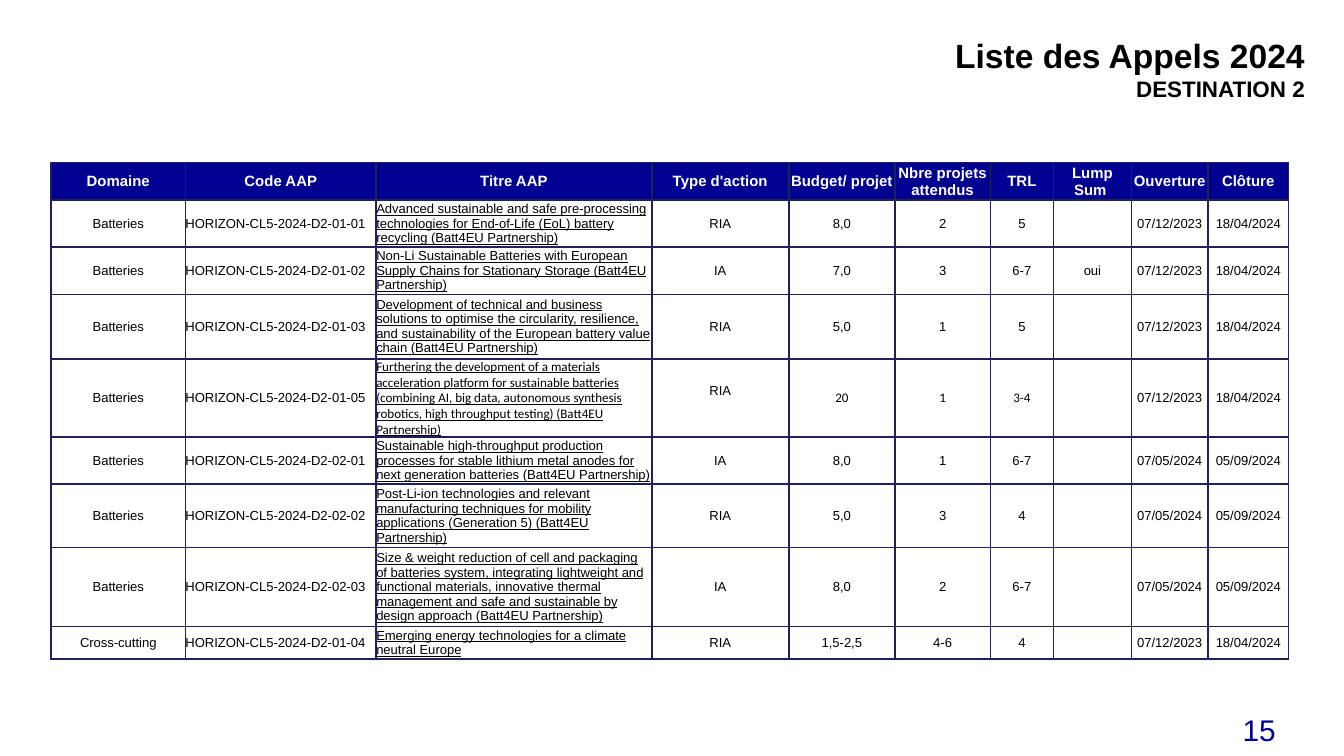
from lxml import etree
from pptx import Presentation
from pptx.dml.color import RGBColor
from pptx.enum import text
from pptx.oxml import ns
from pptx.util import Inches, Pt

NAVY = RGBColor(0x00, 0x00, 0x91)
BLACK = RGBColor(0x00, 0x00, 0x00)
WHITE = RGBColor(0xFF, 0xFF, 0xFF)
BORDER = RGBColor(0x21, 0x21, 0x5A)

LEFT, CENTER, RIGHT = text.PP_ALIGN.LEFT, text.PP_ALIGN.CENTER, text.PP_ALIGN.RIGHT


def write(p, content, size=7, color=BLACK, bold=False, underline=False,
          font="Arial", align=CENTER):
    p.alignment = align
    if not content:
        # An empty cell still needs a small font to keep its row low
        etree.SubElement(p._p, ns.qn("a:endParaRPr"), sz=str(size * 100))
        return
    r = p.add_run()
    r.text = content
    r.font.name = font
    r.font.size = Pt(size)
    r.font.bold = bold
    r.font.underline = underline
    r.font.color.rgb = color


def add_borders(cell):
    tc_pr = cell._tc.get_or_add_tcPr()
    for i, side in enumerate(("lnL", "lnR", "lnT", "lnB")):
        ln = etree.Element(ns.qn(f"a:{side}"), w=str(Pt(1)))
        fill = etree.SubElement(ln, ns.qn("a:solidFill"))
        etree.SubElement(fill, ns.qn("a:srgbClr"), val=str(BORDER))
        tc_pr.insert(i, ln)


# Slide in 16:9
prs = Presentation()
prs.slide_width = Inches(10)
prs.slide_height = Inches(10 * 9 / 16)
s = prs.slides.add_slide(prs.slide_layouts[5])

# Title
sp = s.shapes.title
sp.left, sp.top, sp.width, sp.height = Inches(3.5), Inches(0.21), Inches(6.31), Inches(0.61)
tf = sp.text_frame
tf.auto_size = text.MSO_AUTO_SIZE.SHAPE_TO_FIT_TEXT
tf.vertical_anchor = text.MSO_ANCHOR.TOP
write(tf.paragraphs[0], "Liste des Appels 2024", size=18, bold=True, align=RIGHT)
write(tf.add_paragraph(), "DESTINATION 2", size=12, bold=True, align=RIGHT)

# Table of calls
HEADERS = ("Domaine", "Code AAP", "Titre AAP", "Type d'action", "Budget/ projet",
           "Nbre projets attendus", "TRL", "Lump Sum ", "Ouverture", "Clôture")
CODE, TITLE, ACTION, BUDGET, TRL, LUMP_SUM = 1, 2, 3, 4, 6, 7
BAT = "Batteries"
PREFIX = "HORIZON-CL5-2024-D2-"
FIRST = ("07/12/2023", "18/04/2024")
SECOND = ("07/05/2024", "05/09/2024")
CALLS = (
    (BAT, PREFIX + "01-01",
     "Advanced sustainable and safe pre-processing technologies for End-of-Life (EoL) "
     "battery recycling (Batt4EU Partnership)",
     "RIA", "8,0", "2", "5", "", *FIRST),
    (BAT, PREFIX + "01-02",
     "Non-Li Sustainable Batteries with European Supply Chains for Stationary Storage "
     "(Batt4EU Partnership)",
     "IA", "7,0", "3", "6-7", "oui", *FIRST),
    (BAT, PREFIX + "01-03",
     "Development of technical and business solutions to optimise the circularity, "
     "resilience, and sustainability of the European battery value chain "
     "(Batt4EU Partnership)",
     "RIA", "5,0", "1", "5", "", *FIRST),
    (BAT, PREFIX + "01-05",
     "Furthering the development of a materials acceleration platform for sustainable "
     "batteries (combining AI, big data, autonomous synthesis robotics, high throughput "
     "testing) (Batt4EU Partnership)",
     "RIA", "20", "1", "3-4", "", *FIRST),
    (BAT, PREFIX + "02-01",
     "Sustainable high-throughput production processes for stable lithium metal anodes "
     "for next generation batteries (Batt4EU Partnership)",
     "IA", "8,0", "1", "6-7", "", *SECOND),
    (BAT, PREFIX + "02-02",
     "Post-Li-ion technologies and relevant manufacturing techniques for mobility "
     "applications (Generation 5) (Batt4EU Partnership)",
     "RIA", "5,0", "3", "4", "", *SECOND),
    (BAT, PREFIX + "02-03",
     "Size & weight reduction of cell and packaging of batteries system, integrating "
     "lightweight and functional materials, innovative thermal management and safe and "
     "sustainable by design approach (Batt4EU Partnership)",
     "IA", "8,0", "2", "6-7", "", *SECOND),
    ("Cross-cutting", PREFIX + "01-04",
     "Emerging energy technologies for a climate neutral Europe",
     "RIA", "1,5-2,5", "4-6", "4", "", *FIRST),
)
COL_WIDTHS = (1, 1.42, 2.05, 1.02, 0.79, 0.71, 0.47, 0.58, 0.57, 0.6)
ROW_HEIGHTS = (0.28, 0.35, 0.35, 0.48, 0.58, 0.35, 0.47, 0.59, 0.24)
CALIBRI_ROW = 4
CALIBRI_COLS = (TITLE, *range(BUDGET, TRL + 1))

table = s.shapes.add_table(len(ROW_HEIGHTS), len(COL_WIDTHS), Inches(0.38), Inches(1.21),
                           Inches(sum(COL_WIDTHS)), Inches(sum(ROW_HEIGHTS))).table
for column, width in zip(table.columns, COL_WIDTHS):
    column.width = Inches(width)
for row, height in zip(table.rows, ROW_HEIGHTS):
    row.height = Inches(height)

for i, values in enumerate((HEADERS, *CALLS)):
    for j, value in enumerate(values):
        cell = table.cell(i, j)
        cell.margin_left = cell.margin_right = cell.margin_top = cell.margin_bottom = 0
        cell.vertical_anchor = text.MSO_ANCHOR.MIDDLE
        p = cell.text_frame.paragraphs[0]
        if i == 0:
            cell.fill.solid()
            cell.fill.fore_color.rgb = NAVY
            write(p, value, size=8, color=WHITE, bold=True)
        else:
            cell.fill.background()
            calibri = i == CALIBRI_ROW and j in CALIBRI_COLS
            write(p, value, underline=j == TITLE,
                  font="Calibri" if calibri else "Arial",
                  align=LEFT if j in (CODE, TITLE) else CENTER)
        add_borders(cell)

# Narrower header that breaks in two lines, and one raised action type
table.cell(0, LUMP_SUM).margin_left = table.cell(0, LUMP_SUM).margin_right = Inches(0.02)
table.cell(CALIBRI_ROW, ACTION).margin_bottom = Inches(0.1)

# Page number
sp = s.shapes.add_textbox(Inches(8.31), Inches(5.23), Inches(1.28), Inches(0.39))
tf = sp.text_frame
tf.word_wrap = True
tf.vertical_anchor = text.MSO_ANCHOR.MIDDLE
write(tf.paragraphs[0], "15", size=16, color=NAVY, align=RIGHT)

prs.save("out.pptx")
